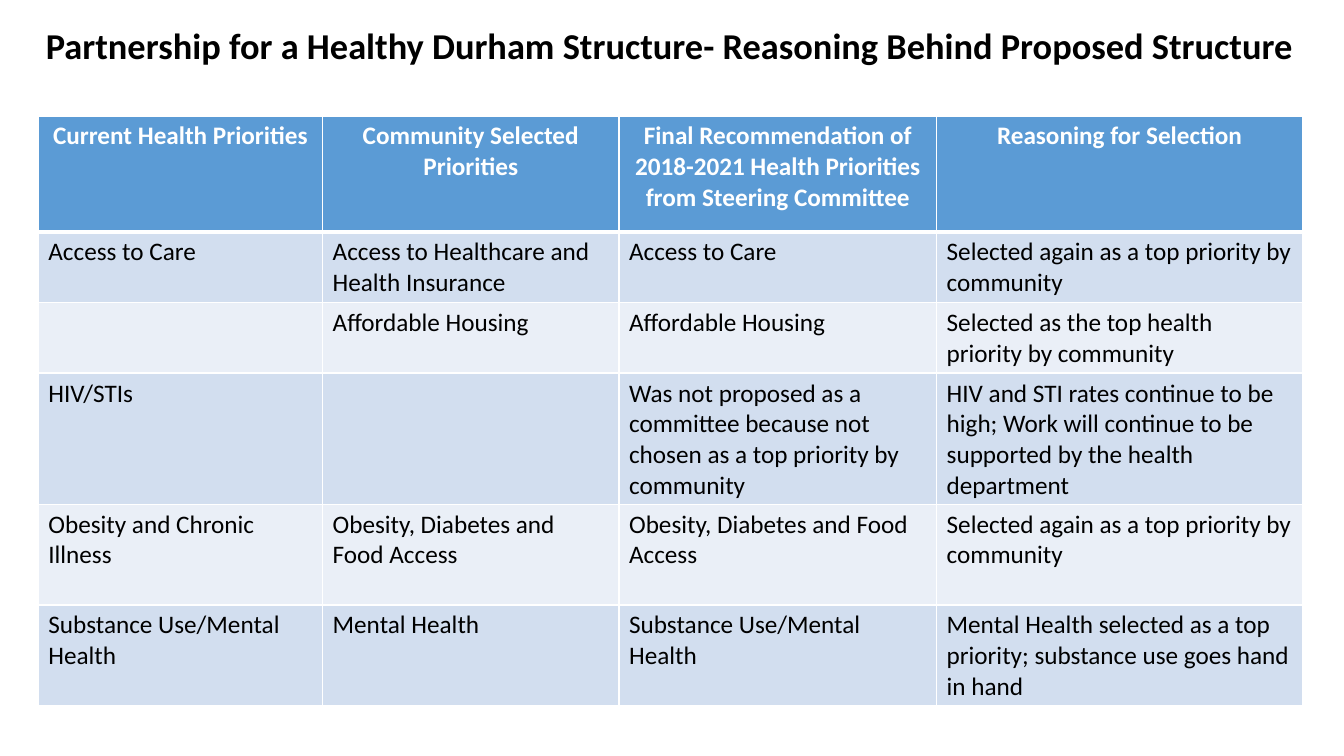
from lxml import etree
from pptx import Presentation
from pptx import util as u
from pptx.dml.color import RGBColor
from pptx.enum import text
from pptx.oxml import ns

BLACK = RGBColor(0x00, 0x00, 0x00)
WHITE = RGBColor(0xFF, 0xFF, 0xFF)
HEADER_BLUE = RGBColor(0x5B, 0x9B, 0xD5)
BANDS = (RGBColor(0xD2, 0xDE, 0xEF), RGBColor(0xEA, 0xEF, 0xF7))

COLUMN_WIDTHS = (2.82, 2.94, 3.15, 3.63)
ROW_HEIGHTS = (1.15, 0.7, 0.7, 1.3, 1, 1)
PRIORITIES = (
    ("Current Health Priorities", "Community Selected Priorities",
     "Final Recommendation of 2018-2021 Health Priorities from Steering Committee",
     "Reasoning for Selection"),
    ("Access to Care", "Access to Healthcare and Health Insurance", "Access to Care",
     "Selected again as a top priority by community"),
    ("", "Affordable Housing", "Affordable Housing",
     "Selected as the top health priority by community"),
    ("HIV/STIs", "",
     "Was not proposed as a committee because not chosen as a top priority by community",
     "HIV and STI rates continue to be high; Work will continue to be supported "
     "by the health department"),
    ("Obesity and Chronic Illness", "Obesity, Diabetes and Food Access",
     "Obesity, Diabetes and Food Access",
     "Selected again as a top priority by community"),
    ("Substance Use/Mental Health", "Mental Health", "Substance Use/Mental Health",
     "Mental Health selected as a top priority; substance use goes hand in hand"),
)


class SlideBuilder:
    """Holds the text style and the current slide."""

    font = "Calibri"

    def __init__(self, slide):
        self.slide = slide

    def add_words(self, frame, words, size, color, bold=False, centered=False):
        para = frame.paragraphs[0]
        para.alignment = text.PP_ALIGN.CENTER if centered else text.PP_ALIGN.LEFT
        para.font.size = u.Pt(size)
        if words:
            span = para.add_run()
            span.text = words
            span.font.name = self.font
            span.font.size = u.Pt(size)
            span.font.bold = bold
            span.font.color.rgb = color

    def title(self, words, left, top, width, height):
        box = self.slide.shapes.add_textbox(
            u.Inches(left), u.Inches(top), u.Inches(width), u.Inches(height))
        box.text_frame.word_wrap = True
        self.add_words(box.text_frame, words, 26, BLACK, bold=True, centered=True)

    def border(self, cell, side, points):
        line = etree.SubElement(cell._tc.get_or_add_tcPr(), ns.qn(f"a:ln{side}"),
                                w=str(u.Pt(points)))
        fill = etree.SubElement(line, ns.qn("a:solidFill"))
        etree.SubElement(fill, ns.qn("a:srgbClr"), val=str(WHITE))

    def table(self, rows, left, top, widths, heights):
        table = self.slide.shapes.add_table(
            len(rows), len(widths), u.Inches(left), u.Inches(top),
            u.Inches(sum(widths)), u.Inches(sum(heights))).table
        for column, width in zip(table.columns, widths):
            column.width = u.Inches(width)
        for r, (words_in_row, height) in enumerate(zip(rows, heights)):
            table.rows[r].height = u.Inches(height)
            header = r == 0
            for c, words in enumerate(words_in_row):
                cell = table.cell(r, c)
                # The line under the header row is heavier
                for side in "LRTB":
                    heavy = (r, side) in ((0, "B"), (1, "T"))
                    self.border(cell, side, 3 if heavy else 1)
                cell.fill.solid()
                cell.fill.fore_color.rgb = HEADER_BLUE if header else BANDS[(r - 1) % 2]
                self.add_words(cell.text_frame, words, 18, WHITE if header else BLACK,
                               bold=header, centered=header)


def main():
    deck = Presentation()
    deck.slide_width, deck.slide_height = u.Inches(13.33), u.Inches(7.5)
    page = SlideBuilder(deck.slides.add_slide(deck.slide_layouts[6]))

    # Title
    page.title("Partnership for a Healthy Durham Structure- Reasoning Behind "
               "Proposed Structure", 0.13, 0.18, 13.04, 0.54)

    # Priorities table
    page.table(PRIORITIES, 0.38, 1.15, COLUMN_WIDTHS, ROW_HEIGHTS)

    deck.save("out.pptx")


if __name__ == "__main__":
    main()
